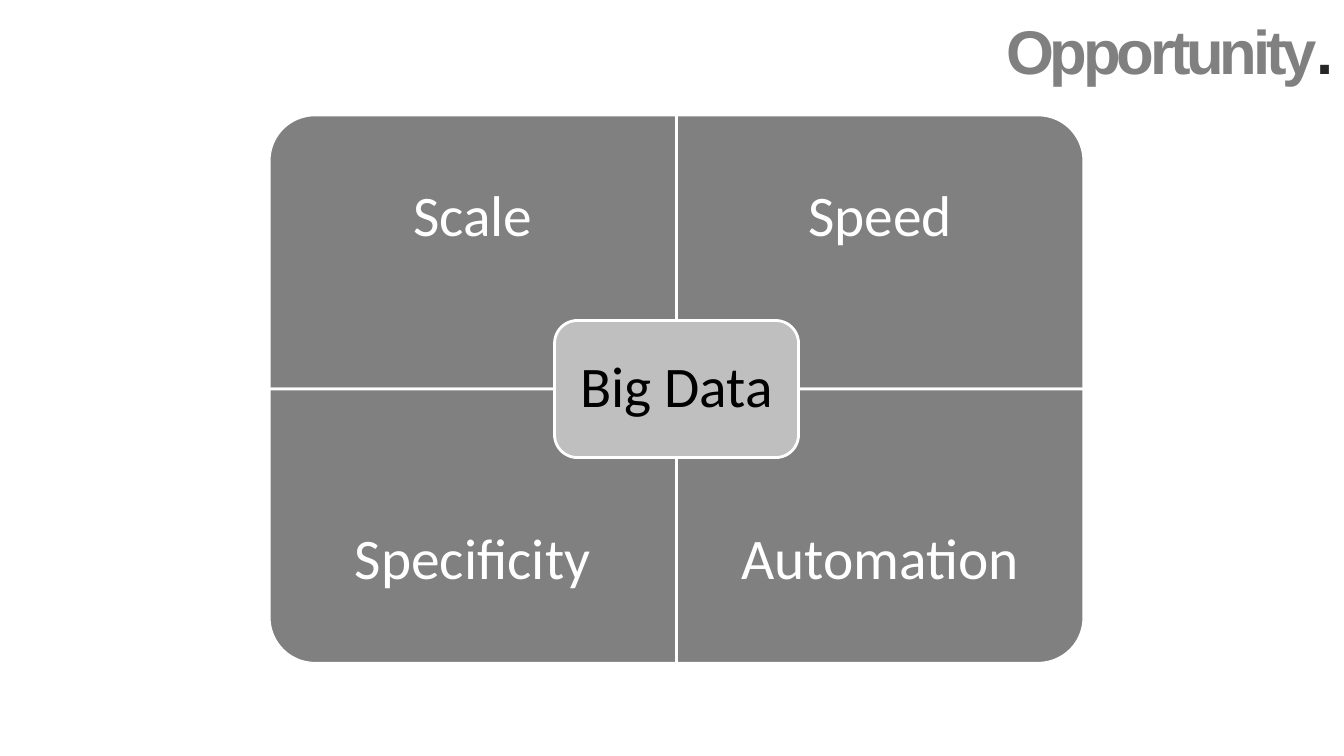
from dataclasses import dataclass

from pptx import Presentation
from pptx.dml.color import RGBColor
from pptx.enum.shapes import MSO_SHAPE
from pptx.enum.text import MSO_ANCHOR, MSO_AUTO_SIZE, PP_ALIGN
from pptx.util import Pt

EMU_PER_PX = 9144


@dataclass(frozen=True)
class Theme:
    panel: str = "808080"
    center: str = "BFBFBF"
    light: str = "FFFFFF"
    dark: str = "000000"
    period: str = "262626"
    title_font: str = "Arial"
    label_font: str = "Calibri"
    title_size: int = 44
    label_size: int = 41
    title_spacing: int = -300
    line_width: int = 2


def px(length):
    return round(length * EMU_PER_PX)


def color(value):
    return RGBColor.from_string(value)


class SlideBuilder:
    def __init__(self, slide, theme):
        self.slide = slide
        self.theme = theme
        self.matrix = slide.shapes.add_group_shape().shapes

    def title(self, box, parts):
        shape = self.slide.shapes.add_textbox(*map(px, box))
        frame = shape.text_frame
        frame.word_wrap = True
        frame.auto_size = MSO_AUTO_SIZE.SHAPE_TO_FIT_TEXT
        paragraph = frame.paragraphs[0]
        paragraph.alignment = PP_ALIGN.RIGHT
        paragraph.font.name = self.theme.title_font
        paragraph.font.size = Pt(self.theme.title_size)
        paragraph.font.bold = True
        for text, fill in parts:
            run = paragraph.add_run()
            run.text = text
            run.font.color.rgb = color(fill)
            run._r.get_or_add_rPr().set("spc", str(self.theme.title_spacing))

    def panel(self, kind, box, fill, rotation=0):
        left, top, width, height = box
        if rotation % 180:
            left += (width - height) / 2
            top += (height - width) / 2
            width, height = height, width
        shape = self.matrix.add_shape(kind, px(left), px(top), px(width), px(height))
        shape.rotation = rotation
        shape.shadow.inherit = False
        shape.fill.solid()
        shape.fill.fore_color.rgb = color(fill)
        shape.line.color.rgb = color(self.theme.light)
        shape.line.width = Pt(self.theme.line_width)

    def label(self, text, box, fill, inset):
        frame = self.matrix.add_textbox(*map(px, box)).text_frame
        frame.word_wrap = True
        frame.vertical_anchor = MSO_ANCHOR.MIDDLE
        frame.margin_left = frame.margin_right = px(inset)
        frame.margin_top = frame.margin_bottom = px(inset)
        paragraph = frame.paragraphs[0]
        paragraph.text = text
        paragraph.alignment = PP_ALIGN.CENTER
        paragraph.line_spacing = 0.9
        paragraph.font.name = self.theme.label_font
        paragraph.font.size = Pt(self.theme.label_size)
        paragraph.font.color.rgb = color(fill)


def main():
    theme = Theme()
    presentation = Presentation()
    presentation.slide_width = px(1333)
    presentation.slide_height = px(750)
    slide = presentation.slides.add_slide(presentation.slide_layouts[6])
    builder = SlideBuilder(slide, theme)

    builder.title((800, 8, 533, 84), [("Opportunity", theme.panel), (".", theme.period)])

    left, top, width, height = 267, 114, 404, 272
    label_height = 204
    quadrants = [
        ("Scale", 0, 0, 270),
        ("Speed", 1, 0, 0),
        ("Specificity", 0, 1, 180),
        ("Automation", 1, 1, 90),
    ]
    for text, column, row, rotation in quadrants:
        x = left + column * width
        y = top + row * height
        builder.panel(MSO_SHAPE.ROUND_1_RECTANGLE, (x, y, width, height), theme.panel, rotation)
        label_top = y + row * (height - label_height)
        builder.label(text, (x, label_top, width, label_height), theme.light, 32)

    builder.panel(MSO_SHAPE.ROUNDED_RECTANGLE, (550, 318, 242, 136), theme.center)
    builder.label("Big Data", (556, 324, 230, 124), theme.dark, 17)

    presentation.save("out.pptx")


if __name__ == "__main__":
    main()
